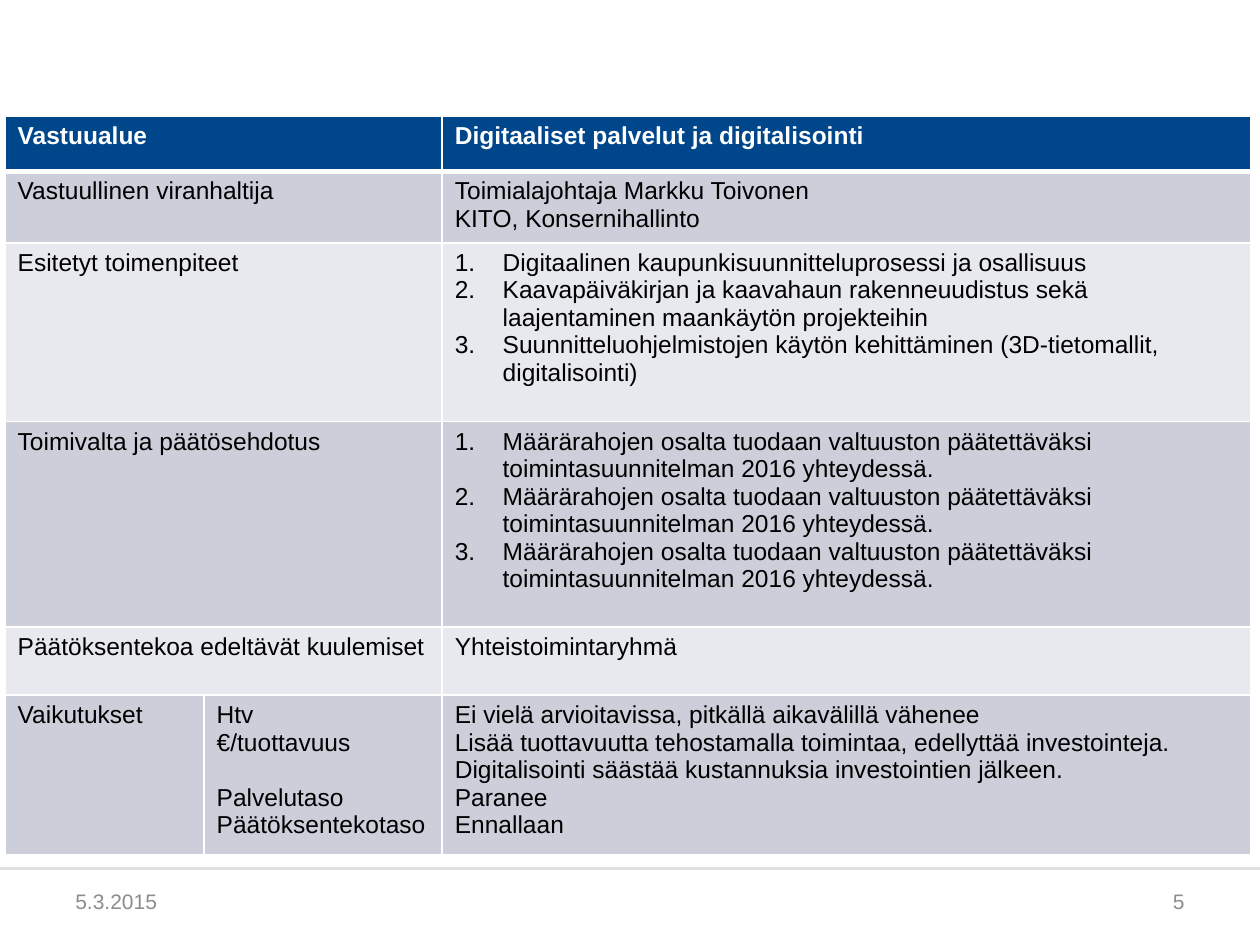
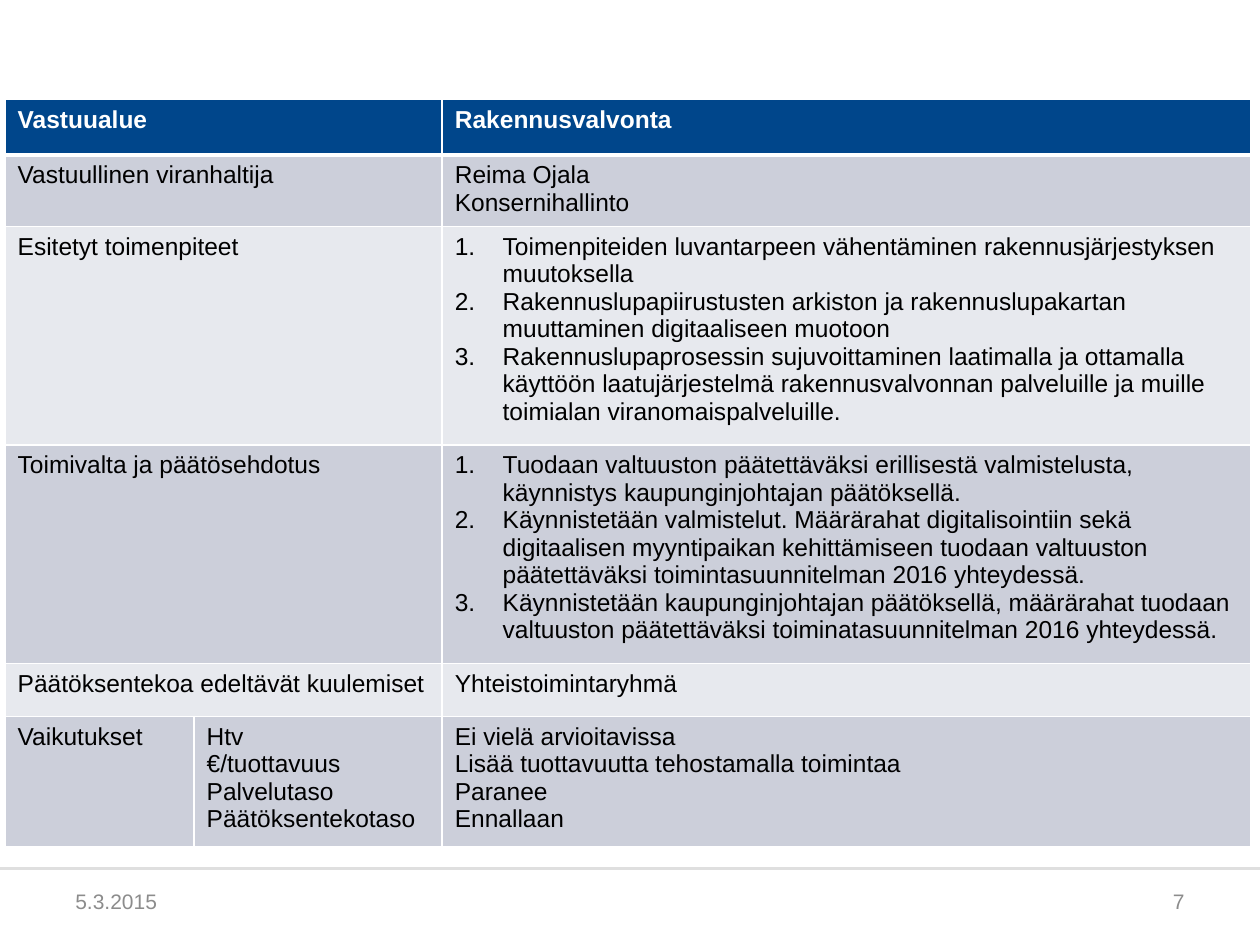
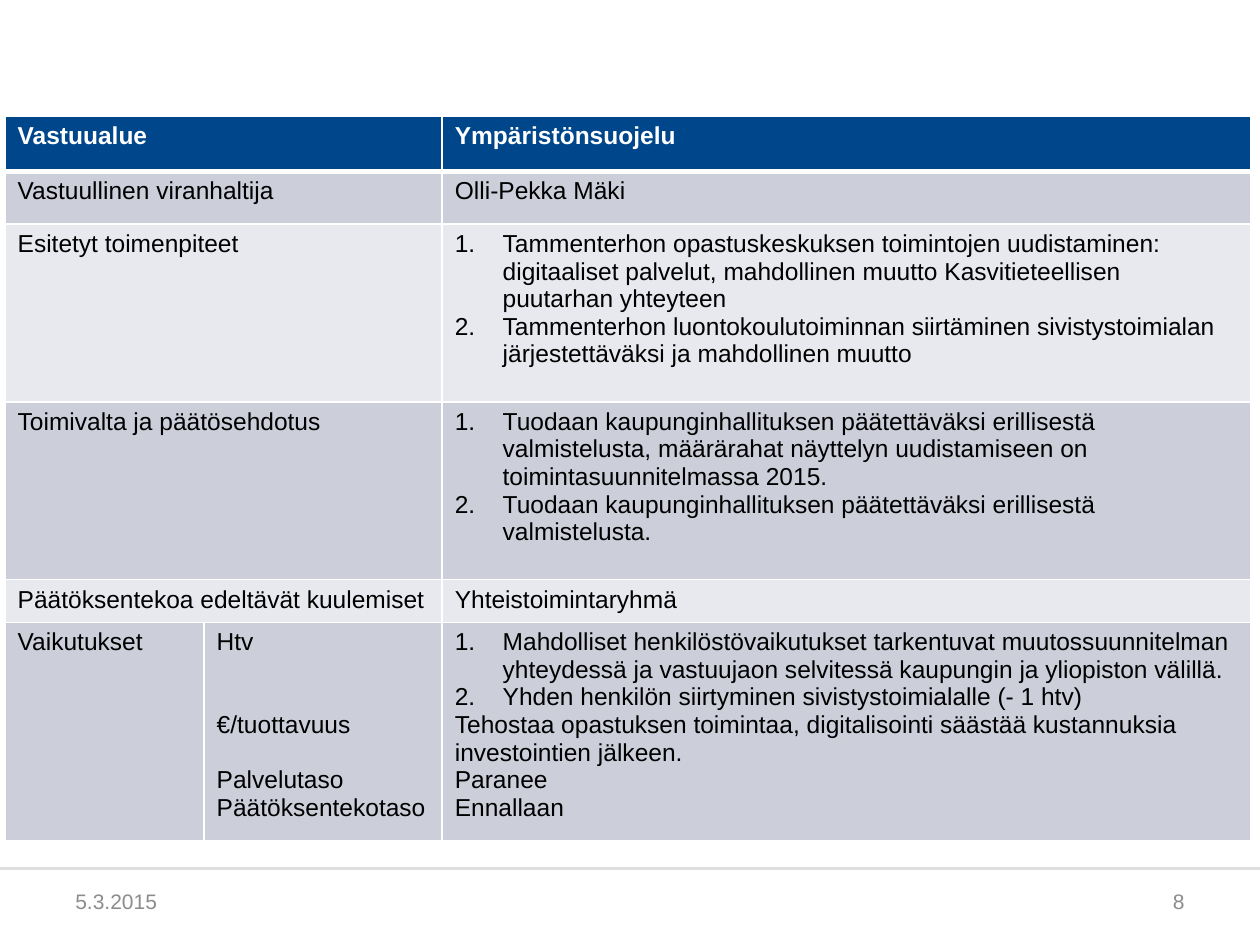
from dataclasses import dataclass

from lxml.etree import SubElement
from pptx import Presentation
from pptx.dml.color import RGBColor
from pptx.enum.shapes import MSO_CONNECTOR, MSO_SHAPE
from pptx.enum.text import MSO_ANCHOR, PP_ALIGN
from pptx.oxml import parse_xml
from pptx.oxml.ns import nsdecls, qn
from pptx.util import Inches, Pt


@dataclass(frozen=True)
class Theme:
    font: str = "Arial"
    header: RGBColor = RGBColor(0x00, 0x46, 0x8B)
    band_dark: RGBColor = RGBColor(0xCC, 0xCF, 0xDA)
    band_light: RGBColor = RGBColor(0xE7, 0xE9, 0xEE)
    white: RGBColor = RGBColor(0xFF, 0xFF, 0xFF)
    black: RGBColor = RGBColor(0x00, 0x00, 0x00)
    footer_text: RGBColor = RGBColor(0x8C, 0x8C, 0x8C)
    footer_rule: RGBColor = RGBColor(0xDF, 0xDF, 0xDF)
    table_size: float = 14
    footer_size: float = 12
    text_line: float = 15.75
    grid_line: float = 1
    header_line: float = 3


THEME = Theme()


@dataclass(frozen=True)
class Entry:
    """One paragraph of a cell."""
    text: str
    numbered: bool = False
    lines_before: int = 0


Entries = list[Entry]


def plain(*texts: str) -> Entries:
    return [Entry(text) for text in texts]


def numbered(*texts: str) -> Entries:
    return [Entry(text, numbered=True) for text in texts]


def effects(*gaps: int) -> Entries:
    """Effect names, each with the number of empty lines above it."""
    names = ("Htv", "€/tuottavuus", "Palvelutaso", "Päätöksentekotaso")
    return [Entry(name, lines_before=gap) for name, gap in zip(names, gaps)]


@dataclass(frozen=True)
class ResponsibilityArea:
    number: int
    top: float
    label_width: float
    row_heights: tuple[float, ...]
    name: str
    official: Entries
    measures: Entries
    decisions: Entries
    effect_names: Entries
    effect_values: Entries


TOPICS = (
    "Vastuualue",
    "Vastuullinen viranhaltija",
    "Esitetyt toimenpiteet",
    "Toimivalta ja päätösehdotus",
    "Päätöksentekoa edeltävät kuulemiset",
    "Vaikutukset",
)
HEARING = "Yhteistoimintaryhmä"
DATE = "5.3.2015"
TABLE_LEFT, TOPIC_WIDTH, CONTENT_WIDTH = 0.04, 3.47, 6.42

AREAS = (
    ResponsibilityArea(
        number=5, top=0.92, label_width=1.58,
        row_heights=(0.44, 0.53, 1.42, 1.63, 0.54, 1.19),
        name="Digitaaliset palvelut ja digitalisointi",
        official=plain("Toimialajohtaja Markku Toivonen", "KITO, Konsernihallinto"),
        measures=numbered(
            "Digitaalinen kaupunkisuunnitteluprosessi ja osallisuus",
            "Kaavapäiväkirjan ja kaavahaun rakenneuudistus sekä laajentaminen "
            "maankäytön projekteihin",
            "Suunnitteluohjelmistojen käytön kehittäminen (3D-tietomallit, digitalisointi)",
        ),
        decisions=3 * numbered(
            "Määrärahojen osalta tuodaan valtuuston päätettäväksi "
            "toimintasuunnitelman 2016 yhteydessä.",
        ),
        effect_names=effects(0, 0, 1, 0),
        effect_values=plain(
            "Ei vielä arvioitavissa, pitkällä aikavälillä vähenee",
            "Lisää tuottavuutta tehostamalla toimintaa, edellyttää investointeja. "
            "Digitalisointi säästää kustannuksia investointien jälkeen.",
            "Paranee",
            "Ennallaan",
        ),
    ),
    ResponsibilityArea(
        number=7, top=0.79, label_width=1.5,
        row_heights=(0.44, 0.54, 1.63, 1.63, 0.42, 0.98),
        name="Rakennusvalvonta",
        official=plain("Reima Ojala", "Konsernihallinto"),
        measures=numbered(
            "Toimenpiteiden luvantarpeen vähentäminen rakennusjärjestyksen muutoksella",
            "Rakennuslupapiirustusten arkiston ja rakennuslupakartan muuttaminen "
            "digitaaliseen muotoon",
            "Rakennuslupaprosessin sujuvoittaminen laatimalla ja ottamalla käyttöön "
            "laatujärjestelmä rakennusvalvonnan palveluille ja muille toimialan "
            "viranomaispalveluille.",
        ),
        decisions=numbered(
            "Tuodaan valtuuston päätettäväksi erillisestä valmistelusta, käynnistys "
            "kaupunginjohtajan päätöksellä.",
            "Käynnistetään valmistelut. Määrärahat digitalisointiin sekä digitaalisen "
            "myyntipaikan kehittämiseen tuodaan valtuuston päätettäväksi "
            "toimintasuunnitelman 2016 yhteydessä.",
            "Käynnistetään kaupunginjohtajan päätöksellä, määrärahat tuodaan valtuuston "
            "päätettäväksi toiminatasuunnitelman 2016 yhteydessä.",
        ),
        effect_names=effects(0, 0, 0, 0),
        effect_values=plain(
            "Ei vielä arvioitavissa",
            "Lisää tuottavuutta tehostamalla toimintaa",
            "Paranee",
            "Ennallaan",
        ),
    ),
    ResponsibilityArea(
        number=8, top=0.92, label_width=1.58,
        row_heights=(0.44, 0.42, 1.41, 1.41, 0.34, 1.63),
        name="Ympäristönsuojelu",
        official=plain("Olli-Pekka Mäki"),
        measures=numbered(
            "Tammenterhon opastuskeskuksen toimintojen uudistaminen: digitaaliset "
            "palvelut, mahdollinen muutto Kasvitieteellisen puutarhan yhteyteen",
            "Tammenterhon luontokoulutoiminnan siirtäminen sivistystoimialan "
            "järjestettäväksi ja mahdollinen muutto",
        ),
        decisions=numbered(
            "Tuodaan kaupunginhallituksen päätettäväksi erillisestä valmistelusta, "
            "määrärahat näyttelyn uudistamiseen on toimintasuunnitelmassa 2015.",
            "Tuodaan kaupunginhallituksen päätettäväksi erillisestä valmistelusta.",
        ),
        effect_names=effects(0, 2, 1, 0),
        effect_values=numbered(
            "Mahdolliset henkilöstövaikutukset tarkentuvat muutossuunnitelman yhteydessä "
            "ja vastuujaon selvitessä kaupungin ja yliopiston välillä.",
            "Yhden henkilön siirtyminen sivistystoimialalle (- 1 htv)",
        ) + plain(
            "Tehostaa opastuksen toimintaa, digitalisointi säästää kustannuksia "
            "investointien jälkeen.",
            "Paranee",
            "Ennallaan",
        ),
    ),
)


def style_font(paragraph, size: float, color: RGBColor, bold: bool = False) -> None:
    font = paragraph.font
    font.name, font.size, font.bold = THEME.font, Pt(size), bold
    font.color.rgb = color


# Footer: white band, rule, date and page number
def add_footer_text(slide, left: float, text: str, align: PP_ALIGN) -> None:
    box = slide.shapes.add_textbox(Inches(left), Inches(6.95), Inches(2.33), Inches(0.4))
    frame = box.text_frame
    frame.word_wrap = True
    frame.vertical_anchor = MSO_ANCHOR.MIDDLE
    paragraph = frame.paragraphs[0]
    paragraph.text = text
    paragraph.alignment = align
    style_font(paragraph, THEME.footer_size, THEME.footer_text)


def add_footer(slide, number: int) -> None:
    band = slide.shapes.add_shape(
        MSO_SHAPE.RECTANGLE, 0, Inches(6.9), Inches(10), Inches(0.6))
    band.shadow.inherit = False
    band.fill.solid()
    band.fill.fore_color.rgb = THEME.white
    band.line.fill.background()

    rule = slide.shapes.add_connector(
        MSO_CONNECTOR.STRAIGHT, 0, Inches(6.89), Inches(10), Inches(6.89))
    rule.line.color.rgb = THEME.footer_rule
    rule.line.width = Pt(1.75)
    SubElement(rule._element.spPr, qn("a:effectLst"))

    add_footer_text(slide, 0.5, DATE, PP_ALIGN.LEFT)
    add_footer_text(slide, 7.17, str(number), PP_ALIGN.RIGHT)


# Table cells
def set_borders(cell, row: int) -> None:
    widths = dict.fromkeys(("lnL", "lnR", "lnT", "lnB"), THEME.grid_line)
    if row == 0:
        widths["lnB"] = THEME.header_line
    elif row == 1:
        widths["lnT"] = THEME.header_line
    properties = cell._tc.get_or_add_tcPr()
    for position, (side, width) in enumerate(widths.items()):
        properties.insert(position, parse_xml(
            f'<a:{side} {nsdecls("a")} w="{Pt(width)}"><a:solidFill>'
            f'<a:srgbClr val="{THEME.white}"/></a:solidFill></a:{side}>'))


def style_cell(cell, row: int) -> None:
    band = THEME.band_dark if row % 2 else THEME.band_light
    cell.fill.solid()
    cell.fill.fore_color.rgb = band if row else THEME.header
    set_borders(cell, row)


def fill_cell(cell, entries: Entries, header: bool) -> None:
    frame = cell.text_frame
    for index, entry in enumerate(entries):
        paragraph = frame.add_paragraph() if index else frame.paragraphs[0]
        paragraph.text = entry.text
        if entry.lines_before:
            paragraph.space_before = Pt(entry.lines_before * THEME.text_line)
        if entry.numbered:
            properties = paragraph._p.get_or_add_pPr()
            properties.set("marL", str(Inches(0.38)))
            properties.set("indent", str(-Inches(0.38)))
            SubElement(properties, qn("a:buFont"), typeface="+mj-lt")
            SubElement(properties, qn("a:buAutoNum"), type="arabicPeriod")
        style_font(paragraph, THEME.table_size,
                   THEME.white if header else THEME.black, bold=header)


def add_area_table(slide, area: ResponsibilityArea) -> None:
    contents = (plain(area.name), area.official, area.measures, area.decisions,
                plain(HEARING), area.effect_values)
    widths = (area.label_width, TOPIC_WIDTH - area.label_width, CONTENT_WIDTH)
    table = slide.shapes.add_table(
        len(TOPICS), len(widths), Inches(TABLE_LEFT), Inches(area.top),
        Inches(sum(widths)), Inches(sum(area.row_heights))).table
    table.horz_banding = False
    for column, width in zip(table.columns, widths):
        column.width = Inches(width)

    last = len(TOPICS) - 1
    for row, (topic, content) in enumerate(zip(TOPICS, contents)):
        table.rows[row].height = Inches(area.row_heights[row])
        label, effect, value = (table.cell(row, column) for column in range(3))
        for cell in (label, effect, value):
            style_cell(cell, row)
        if row == last:
            fill_cell(effect, area.effect_names, header=False)
        else:
            label.merge(effect)
        fill_cell(label, plain(topic), header=row == 0)
        fill_cell(value, content, header=row == 0)


def main() -> None:
    presentation = Presentation()
    presentation.slide_width, presentation.slide_height = Inches(10), Inches(7.5)
    blank = presentation.slide_layouts[6]
    for area in AREAS:
        slide = presentation.slides.add_slide(blank)
        add_footer(slide, area.number)
        add_area_table(slide, area)
    presentation.save("out.pptx")


if __name__ == "__main__":
    main()
